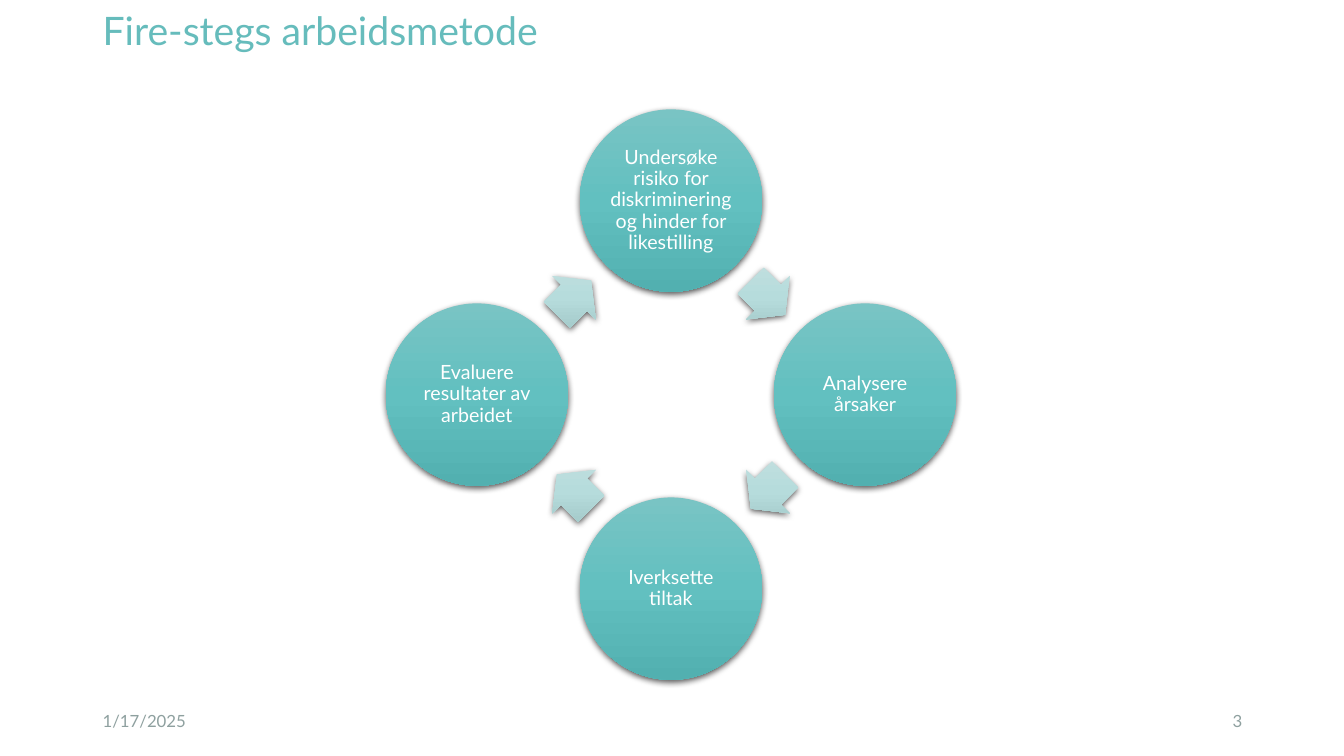
from math import cos, sin, radians
from lxml import etree
from pptx import Presentation
from pptx.dml.color import RGBColor
from pptx.enum.shapes import MSO_SHAPE as Shape
from pptx.enum.text import MSO_ANCHOR as Anchor, PP_ALIGN as Align
from pptx.util import Inches, Pt

TITLE = "Fire-stegs arbeidsmetode"
DATE = "1/17/2025"
PAGE = "3"
STEPS = [
    "Undersøke risiko for diskriminering og hinder for likestilling",
    "Analysere årsaker",
    "Iverksette tiltak",
    "Evaluere resultater av arbeidet",
]
TEAL = ["79C4C4", "62C0C0", "52B0B0"]
PALE = ["C2DFDF", "B6DCDC", "A0C6C6"]
HUB = (6.655, 3.915)
RING, GAP = 1.925, 1.36
DISC = 1.81
ARROW = (0.48, 0.61)
NS = "http://schemas.openxmlformats.org/drawingml/2006/main"


def color(code):
    return RGBColor.from_string(code)


def write(shape, text, size=14, fill="FFFFFF", align=Align.LEFT, line=None, after=0, inset=None):
    frame = shape.text_frame
    frame.word_wrap = True
    frame.vertical_anchor = Anchor.MIDDLE
    if inset is not None:
        frame.margin_left = frame.margin_right = Inches(inset)
        frame.margin_top = frame.margin_bottom = Inches(inset)
    par = frame.paragraphs[0]
    par.alignment = align
    par.space_after = Pt(after)
    if line:
        par.line_spacing = line
    run = par.add_run()
    run.text = text
    run.font.name = "Lato"
    run.font.size = Pt(size)
    run.font.color.rgb = color(fill)


def label(slide, text, left, top, width, height, **style):
    box = slide.shapes.add_textbox(Inches(left), Inches(top), Inches(width), Inches(height))
    write(box, text, **style)


def place(slide, kind, x, y, width, height, shades):
    shape = slide.shapes.add_shape(
        kind, Inches(x - width / 2), Inches(y - height / 2), Inches(width), Inches(height))
    shape.line.fill.background()
    shape.shadow.inherit = False
    stops = "".join(
        f'<a:gs pos="{i * 50000}"><a:srgbClr val="{shade}"/></a:gs>'
        for i, shade in enumerate(shades))
    props = shape.element.spPr
    props.find(f"{{{NS}}}ln").addprevious(etree.fromstring(
        f'<a:gradFill xmlns:a="{NS}" rotWithShape="0"><a:gsLst>{stops}</a:gsLst>'
        '<a:lin ang="5400000" scaled="0"/></a:gradFill>'))
    props.find(f"{{{NS}}}effectLst").append(etree.fromstring(
        f'<a:outerShdw xmlns:a="{NS}" blurRad="{Pt(4.5)}" dist="{Pt(1.5)}" dir="5400000" '
        'algn="ctr" rotWithShape="0"><a:srgbClr val="000000"><a:alpha val="63000"/>'
        '</a:srgbClr></a:outerShdw>'))
    return shape


def polar(radius, angle):
    turn = radians(angle)
    return HUB[0] + radius * cos(turn), HUB[1] + radius * sin(turn)


def main():
    deck = Presentation()
    deck.slide_width, deck.slide_height = Inches(13.33), Inches(7.5)
    slide = deck.slides.add_slide(deck.slide_layouts[6])
    label(slide, TITLE, 0.92, 0.05, 11.5, 0.55, size=28, fill="66BCBC", line=0.9)
    label(slide, DATE, 0.92, 6.95, 3, 0.4, size=12, fill="8EA09F", after=6)
    label(slide, PAGE, 9.42, 6.95, 3, 0.4, size=12, fill="8EA09F", after=6, align=Align.RIGHT)
    for i, step in enumerate(STEPS):
        angle = i * 90 - 90
        disc = place(slide, Shape.OVAL, *polar(RING, angle), DISC, DISC, TEAL)
        write(disc, step, align=Align.CENTER, line=0.9, inset=0.02)
        arrow = place(slide, Shape.RIGHT_ARROW, *polar(GAP, angle + 45), *ARROW, PALE)
        arrow.adjustments[0], arrow.adjustments[1] = 0.6, 0.5
        arrow.rotation = (angle + 135) % 360
    deck.save("out.pptx")


if __name__ == "__main__":
    main()
